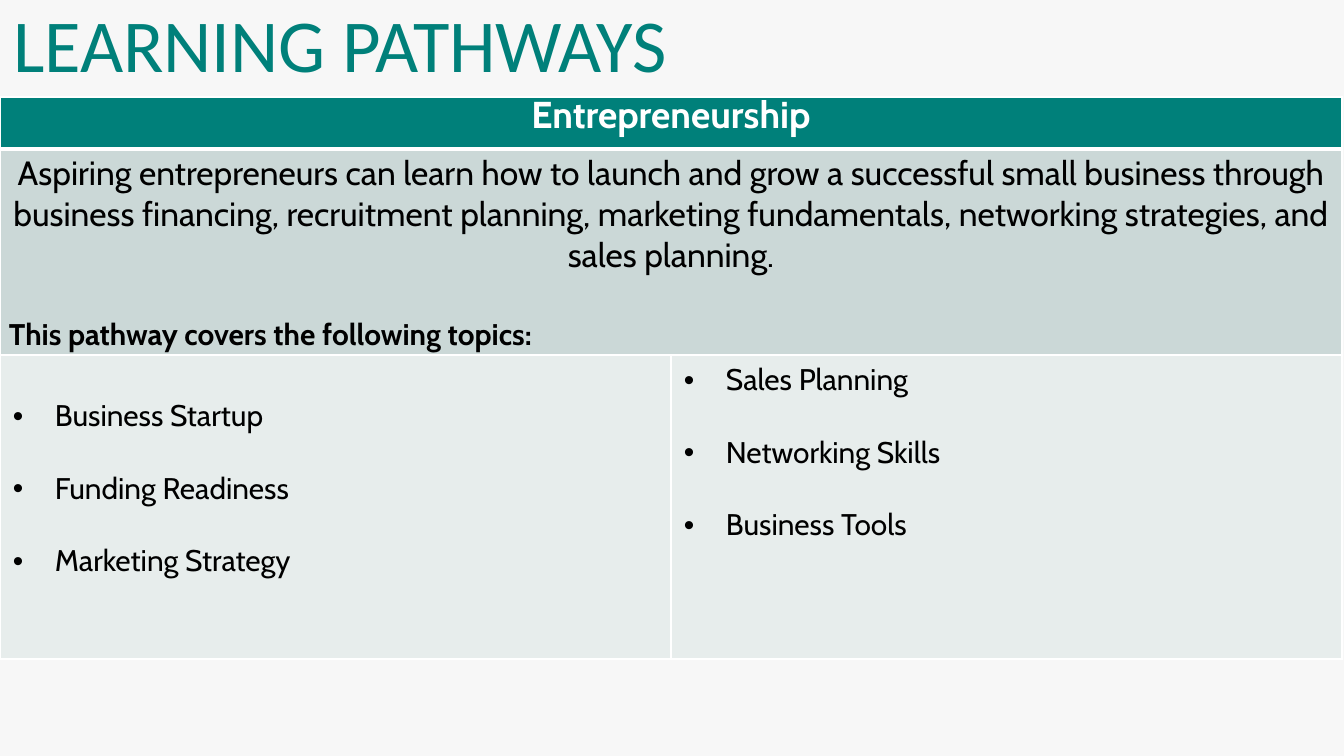
from lxml import etree
from pptx import Presentation
from pptx.dml.color import RGBColor
from pptx.enum.text import MSO_ANCHOR, PP_ALIGN
from pptx.oxml.ns import qn
from pptx.util import Pt

LEFT, CENTER = PP_ALIGN.LEFT, PP_ALIGN.CENTER
MIDDLE, TOP = MSO_ANCHOR.MIDDLE, MSO_ANCHOR.TOP
PX = 914400 / 134.4

THEME = {
    "background": "F7F7F7", "teal": "00807A", "summary": "CBD8D7",
    "topics": "E7EDEC", "white": "FFFFFF", "black": "000000",
    "title_font": "Calibri", "body_font": "Cabin",
    "title": 40, "heading": 20, "body": 18, "topic": 16,
}


def px(length):
    return round(length * PX)


def write(paragraph, text, size, color, font="body_font", bold=False, align=LEFT):
    paragraph.alignment = align
    run = paragraph.add_run()
    run.text = text
    run.font.size = Pt(THEME[size])
    run.font.name = THEME[font]
    run.font.bold = bold
    run.font.color.rgb = RGBColor.from_string(THEME[color])


prs = Presentation()
prs.slide_width, prs.slide_height = px(1344), px(756)
slide = prs.slides.add_slide(prs.slide_layouts[6])
slide.background.fill.solid()
slide.background.fill.fore_color.rgb = RGBColor.from_string(THEME["background"])

# Title
title = slide.shapes.add_textbox(px(0), px(-20), px(1210), px(126)).text_frame
title.word_wrap = True
title.vertical_anchor = MIDDLE
write(title.paragraphs[0], "LEARNING PATHWAYS", "title", "teal", "title_font")

# Pathway table
row_heights = [52, 206, 304]
pathway = slide.shapes.add_table(3, 2, px(0), px(97), px(1342), px(sum(row_heights))).table
pathway.first_row = pathway.horz_banding = False
for column in pathway.columns:
    column.width = px(671)
for row, height in zip(pathway.rows, row_heights):
    row.height = px(height)

# Cell fills and white rules, heavier below the heading
for row_index, fill in enumerate(["teal", "summary", "topics"]):
    for cell in pathway.rows[row_index].cells:
        cell.fill.solid()
        cell.fill.fore_color.rgb = RGBColor.from_string(THEME[fill])
        properties = cell._tc.get_or_add_tcPr()
        for position, side in enumerate(["lnL", "lnR", "lnT", "lnB"]):
            heavy = (row_index, side) in [(0, "lnB"), (1, "lnT")]
            rule = etree.Element(qn(f"a:{side}"), w=str(Pt(2.4 if heavy else 0.8)))
            solid = etree.SubElement(rule, qn("a:solidFill"))
            etree.SubElement(solid, qn("a:srgbClr"), val=THEME["white"])
            properties.insert(position, rule)

# Heading and summary rows
heading, summary = pathway.cell(0, 0), pathway.cell(1, 0)
for row_index, cell in enumerate([heading, summary]):
    cell.merge(pathway.cell(row_index, 1))
    cell.vertical_anchor = MIDDLE
    cell.margin_left = cell.margin_right = px(9)
    cell.margin_top = cell.margin_bottom = px(4)

heading_line = heading.text_frame.paragraphs[0]
heading_line.line_spacing = Pt(16.5)
write(heading_line, "Entrepreneurship", "heading", "white", bold=True, align=CENTER)

write(summary.text_frame.paragraphs[0],
      "Aspiring entrepreneurs can learn how to launch and grow a successful small business "
      "through business financing, recruitment planning, marketing fundamentals, "
      "networking strategies, and sales planning.",
      "body", "black", align=CENTER)
topics_intro = summary.text_frame.add_paragraph()
topics_intro.space_before = Pt(22)
write(topics_intro, "This pathway covers the following topics:", "topic", "black", bold=True)

# Topic lists
topic_columns = [
    (43, ["Business Startup", "Funding Readiness", "Marketing Strategy"]),
    (7, ["Sales Planning", "Networking Skills", "Business Tools"]),
]
for column_index, (top_margin, topics) in enumerate(topic_columns):
    cell = pathway.cell(2, column_index)
    cell.vertical_anchor = TOP
    cell.margin_left = cell.margin_right = px(13)
    cell.margin_top = px(top_margin)
    for topic_index, topic in enumerate(topics):
        frame = cell.text_frame
        item = frame.add_paragraph() if topic_index else frame.paragraphs[0]
        if topic_index:
            item.space_before = Pt(19.5)
        indent = item._p.get_or_add_pPr()
        indent.set("marL", str(px(42)))
        indent.set("indent", str(px(-42)))
        etree.SubElement(indent, qn("a:buFont"), typeface="Arial")
        etree.SubElement(indent, qn("a:buChar"), char="•")
        write(item, topic, "topic", "black")

prs.save("out.pptx")
